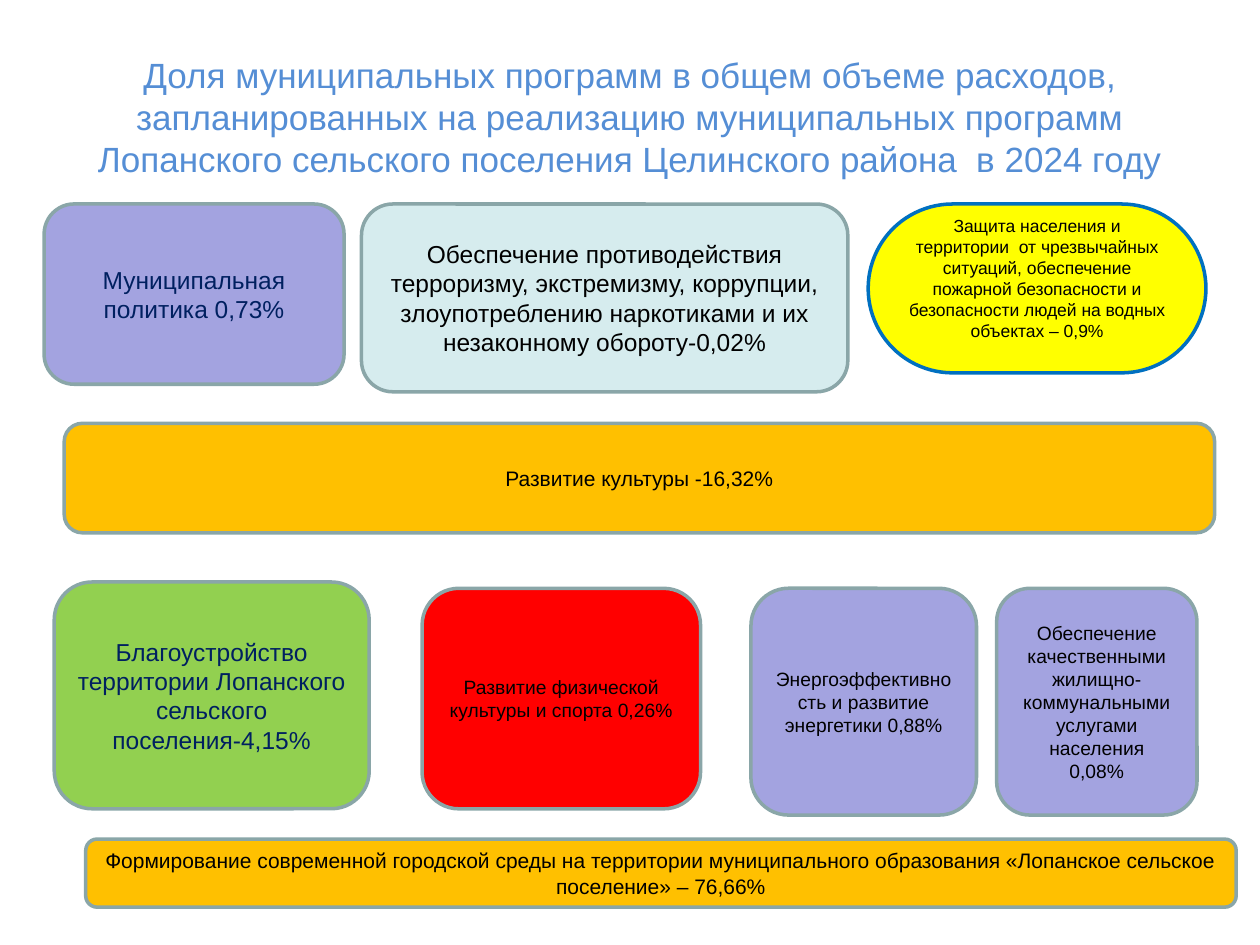
from pptx import Presentation
from pptx.dml.color import RGBColor
from pptx.enum.shapes import MSO_SHAPE
from pptx.enum.text import MSO_ANCHOR, PP_ALIGN
from pptx.util import Pt

ROUNDED = MSO_SHAPE.ROUNDED_RECTANGLE
MIDDLE = MSO_ANCHOR.MIDDLE
CENTER = PP_ALIGN.CENTER

THEME = {
    "font": "Arial",
    "title": "558ED5", "navy": "002060", "black": "000000",
    "lilac": "A3A3E0", "mint": "D6ECEE", "yellow": "FFFF00",
    "amber": "FFC000", "green": "92D050", "red": "FF0000",
    "border": "8AA6A8", "blue": "0070C0",
    "title_size": 20, "large": 14, "medium": 12, "small": 11, "tiny": 10,
    "border_width": 2,
}

TITLE = ("Доля муниципальных программ в общем объеме расходов, запланированных "
         "на реализацию муниципальных программ Лопанского сельского поселения "
         "Целинского района  в 2024 году")

# Each row: top, then its programmes as
# (left, width, height, fill, text, size, extra format)
ROWS = [
    (116.6, [
        (25.2, 171.4, 103, "lilac", "Муниципальная политика 0,73%",
         "large", {"color": "navy"}),
        (206.6, 277.9, 107.3, "mint",
         "Обеспечение противодействия терроризму, экстремизму, коррупции, "
         "злоупотреблению наркотиками и их незаконному обороту-0,02%",
         "large", {}),
        (496.1, 193, 96.5, "yellow",
         "Защита населения и территории  от чрезвычайных ситуаций, обеспечение "
         "пожарной безопасности и безопасности людей на водных объектах – 0,9%",
         "tiny", {"border": "blue", "rounding": 0.5, "bottom_inset": 15.6}),
    ]),
    (241.9, [
        (36.7, 657.4, 62.6, "amber", "Развитие культуры -16,32%", "medium", {}),
    ]),
    (332.6, [
        (31, 180, 129.6, "green",
         "Благоустройство территории Лопанского сельского поселения-4,15%",
         "large", {"color": "navy"}),
    ]),
    (336.2, [
        (241.2, 159.1, 126, "red",
         "Развитие физической культуры и спорта 0,26%", "small", {}),
        (429.1, 128.9, 129.6, "lilac",
         "Энергоэффективность и развитие энергетики 0,88%", "small", {}),
        (569.5, 114.5, 129.6, "lilac",
         "Обеспечение качественными жилищно-коммунальными услугами "
         "населения\v0,08%", "small", {}),
    ]),
    (479.5, [
        (49, 657.4, 38.9, "amber",
         "Формирование современной городской среды на территории "
         "муниципального образования «Лопанское сельское поселение» – 76,66%",
         "medium", {}),
    ]),
]


def color_of(name):
    return RGBColor.from_string(THEME[name])


def write_text(box, text, *, size, color, bottom_inset=3.6):
    frame = box.text_frame
    frame.word_wrap = True
    frame.vertical_anchor = MIDDLE
    frame.margin_bottom = Pt(bottom_inset)
    para = frame.paragraphs[0]
    para.text = text
    para.alignment = CENTER
    para.font.name = THEME["font"]
    para.font.size = Pt(THEME[size])
    para.font.color.rgb = color_of(color)
    for span in para.runs:
        span.font.name = THEME["font"]
        span.font.size = Pt(THEME[size])
        span.font.color.rgb = color_of(color)


def add_programme(page, bounds, text, *, fill, size, color="black",
                  border="border", rounding=None, bottom_inset=3.6):
    box = page.shapes.add_shape(ROUNDED, *map(Pt, bounds))
    box.shadow.inherit = False
    box.fill.solid()
    box.fill.fore_color.rgb = color_of(fill)
    box.line.color.rgb = color_of(border)
    box.line.width = Pt(THEME["border_width"])
    if rounding is not None:
        box.adjustments[0] = rounding
    write_text(box, text, size=size, color=color, bottom_inset=bottom_inset)


def main():
    deck = Presentation()
    deck.slide_width, deck.slide_height = Pt(720), Pt(540)
    page = deck.slides.add_slide(deck.slide_layouts[6])
    title_box = page.shapes.add_textbox(Pt(36), Pt(21.6), Pt(648), Pt(90))
    write_text(title_box, TITLE, size="title_size", color="title")
    for top, programmes in ROWS:
        for left, width, height, fill, text, size, extra in programmes:
            add_programme(page, (left, top, width, height), text,
                          fill=fill, size=size, **extra)
    deck.save("out.pptx")


if __name__ == "__main__":
    main()
